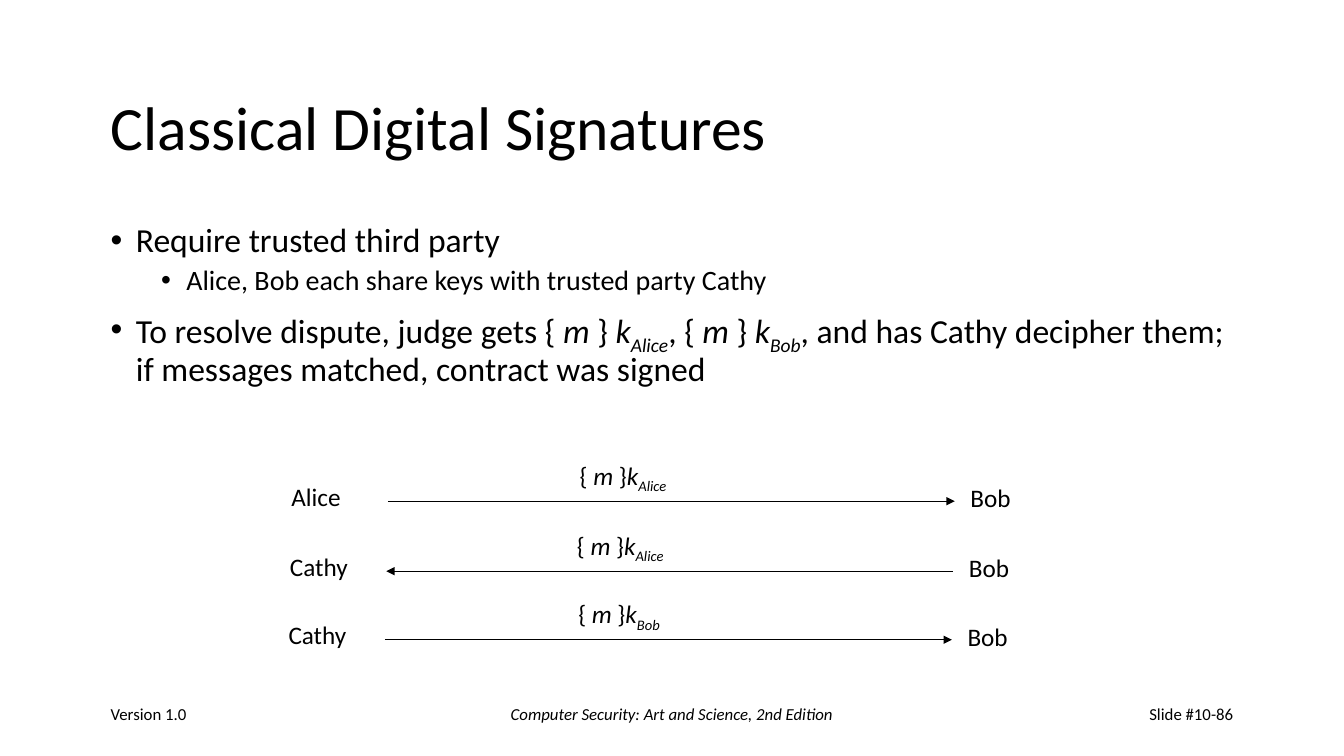
from dataclasses import dataclass

from lxml import etree
from pptx import Presentation
from pptx.dml.color import RGBColor
from pptx.enum.shapes import MSO_CONNECTOR
from pptx.enum.text import MSO_ANCHOR, MSO_AUTO_SIZE, PP_ALIGN
from pptx.oxml.ns import qn
from pptx.util import Pt

LEFT, CENTER, RIGHT = PP_ALIGN.LEFT, PP_ALIGN.CENTER, PP_ALIGN.RIGHT
TOP, MIDDLE = MSO_ANCHOR.TOP, MSO_ANCHOR.MIDDLE
GROW = MSO_AUTO_SIZE.SHAPE_TO_FIT_TEXT
STRAIGHT = MSO_CONNECTOR.STRAIGHT


@dataclass(frozen=True)
class Theme:
    font: str = "Calibri"
    ink: RGBColor = RGBColor(0, 0, 0)
    title: int = 44
    bullets: tuple = (24, 20)  # by level
    diagram: int = 18
    footer: int = 12


THEME = Theme()


def format_run(r, size, italic=False, subscript=False):
    r.font.name = THEME.font
    r.font.size = Pt(size)
    r.font.color.rgb = THEME.ink
    r.font.italic = italic
    if subscript:
        r.font._element.set("baseline", "-25000")


def fill_paragraph(p, parts, size):
    """Parts are (text, style): "" plain, "i" italic, "s" italic subscript."""
    for text, style in parts:
        r = p.add_run()
        r.text = text
        format_run(r, size, style in ("i", "s"), style == "s")


def add_box(s, box, anchor=TOP):
    tf = s.shapes.add_textbox(*map(Pt, box)).text_frame
    tf.word_wrap = True
    tf.vertical_anchor = anchor
    return tf


def add_line_of_text(s, box, parts, size, anchor=TOP, align=LEFT):
    tf = add_box(s, box, anchor)
    p = tf.paragraphs[0]
    p.alignment = align
    fill_paragraph(p, parts, size)
    return tf


def encrypted(gap, key):
    """Message m enciphered with the key of the named person."""
    return [("{ ", ""), ("m", "i"), (" }" + gap, ""), ("k", "i"), (key, "s")]


def add_title(s, box, text):
    tf = add_line_of_text(s, box, [(text, "")], THEME.title, MIDDLE)
    tf.paragraphs[0].line_spacing = 0.9


def add_bullets(s, box, items):
    tf = add_box(s, box)
    for i, (level, parts) in enumerate(items):
        p = tf.paragraphs[0] if i == 0 else tf.add_paragraph()
        p.level = level
        pPr = p._p.get_or_add_pPr()
        pPr.set("marL", str(Pt(18 + 36 * level)))
        pPr.set("indent", str(Pt(-18)))
        etree.SubElement(pPr, qn("a:buFont")).set("typeface", "Arial")
        etree.SubElement(pPr, qn("a:buChar")).set("char", "•")
        p.line_spacing = 0.9
        if i:
            p.space_before = Pt(5 if level else 10)
        fill_paragraph(p, parts, THEME.bullets[level])


def add_arrow(s, x1, x2, y, end):
    line = s.shapes.add_connector(STRAIGHT, Pt(x1), Pt(y), Pt(x2), Pt(y))
    line.line.color.rgb = THEME.ink
    line.line.width = Pt(0.75)
    head = etree.SubElement(line.line._get_or_add_ln(), qn("a:" + end))
    head.set("type", "triangle")
    etree.SubElement(line._element.spPr, qn("a:effectLst"))


def add_message(s, x, y, sender, end, key, label_dx, label_width):
    """One exchange; x is the left edge, y the height of the arrow."""
    height = 29
    boxes = [
        ((x, y - 18, 73, height), [(sender, "")]),
        ((x + 485, y - 16.8, 73, height), [("Bob", "")]),
        ((x + label_dx, y - 33, label_width, height), encrypted("", key)),
    ]
    for box, parts in boxes:
        tf = add_line_of_text(s, box, parts, THEME.diagram)
        tf.auto_size = GROW
    add_arrow(s, x + 76, x + 481, y, end)


def add_footer(s, box):
    x, y, w, h = box
    side, middle = 200, 304
    columns = [
        (x, side, "Version 1.0", "", LEFT),
        (x + (w - middle) / 2, middle,
         "Computer Security: Art and Science, 2nd Edition", "i", CENTER),
        (x + w - side, side, "Slide #10-86", "", RIGHT),
    ]
    for left, width, text, style, align in columns:
        add_line_of_text(s, (left, y, width, h), [(text, style)],
                         THEME.footer, MIDDLE, align)


def main():
    prs = Presentation()
    prs.slide_width, prs.slide_height = Pt(960), Pt(540)
    s = prs.slides.add_slide(prs.slide_layouts[6])
    left, width = 72, 816

    # Title and bullets
    add_title(s, (left, 48, width, 90), "Classical Digital Signatures")
    add_bullets(s, (left, 156, width, 156), [
        (0, [("Require trusted third party", "")]),
        (1, [("Alice, Bob each share keys with trusted party Cathy", "")]),
        (0, [("To resolve dispute, judge gets ", ""),
             *encrypted(" ", "Alice"), (", ", ""), *encrypted(" ", "Bob"),
             (", and has Cathy decipher them; if messages matched, "
              "contract was signed", "")]),
    ])

    # Exchanges: x, y, sender, arrowhead, key, label offset, label width
    for message in [
        (201, 358, "Alice", "tailEnd", "Alice", 206, 148),
        (200, 408, "Cathy", "headEnd", "Alice", 205, 119),
        (199, 457, "Cathy", "tailEnd", "Bob", 207, 119),
    ]:
        add_message(s, *message)

    # Footer
    add_footer(s, (left, 492, width, 36))
    prs.save("out.pptx")


if __name__ == "__main__":
    main()
